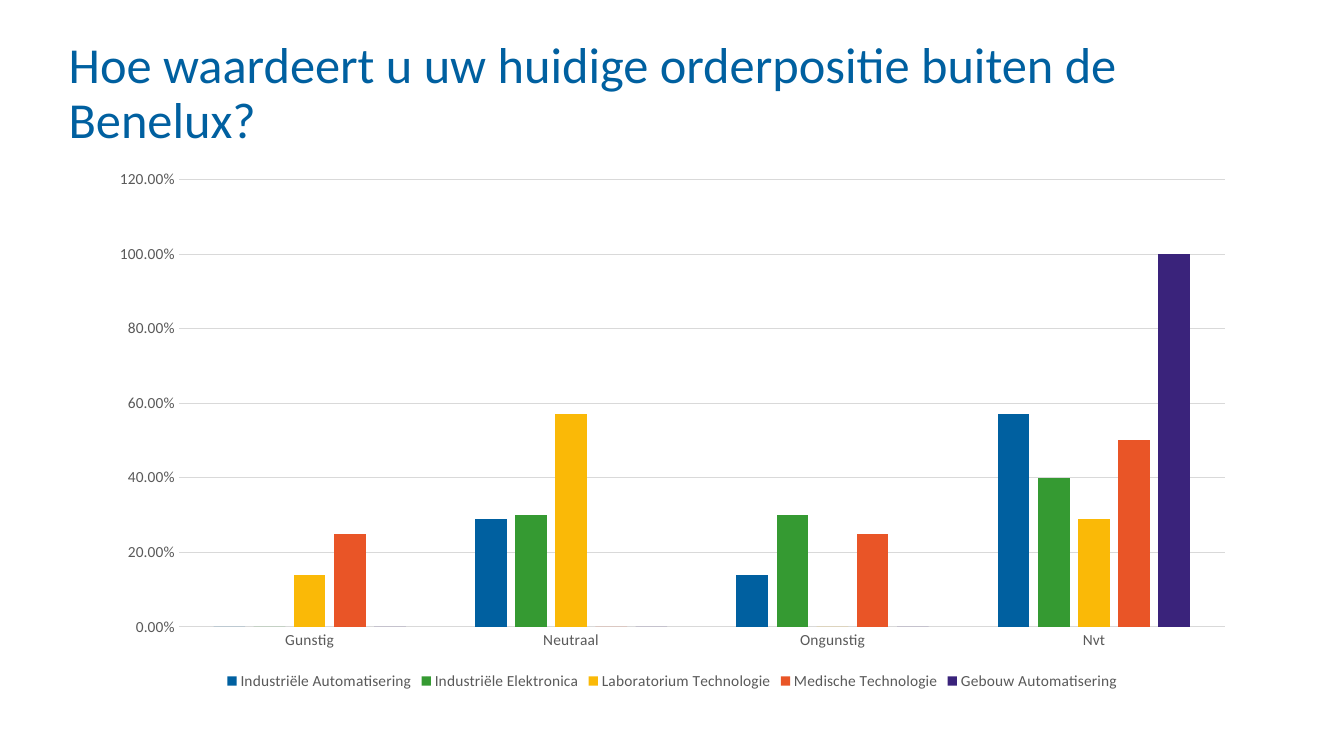
from lxml import etree
from pptx import Presentation
from pptx import util as u
from pptx.chart.data import CategoryChartData
from pptx.dml.color import RGBColor
from pptx.enum import chart as ch, text
from pptx.util import Pt

FONT = "Calibri"
COLORS = {"title": "0060A0", "label": "595959", "grid": "D9D9D9"}
ANSWERS = ["Gunstig", "Neutraal", "Ongunstig", "Nvt"]
# sector, share per answer, bar colour
SECTORS = [
    ("Industriële Automatisering", (0, 0.29, 0.14, 0.57), "0060A0"),
    ("Industriële Elektronica", (0, 0.3, 0.3, 0.4), "359A32"),
    ("Laboratorium Technologie", (0.14, 0.57, 0, 0.29), "FAB907"),
    ("Medische Technologie", (0.25, 0, 0.25, 0.5), "E95527"),
    ("Gebouw Automatisering", (0, 0, 0, 1), "3A237B"),
]


def rgb(name):
    return RGBColor.from_string(COLORS[name])


def set_font(font, size, color):
    font.name = FONT
    font.size = Pt(size)
    font.color.rgb = rgb(color)


def set_line(line, color):
    line.color.rgb = rgb(color)
    line.width = Pt(0.75)


def add_title(s, wording, left, top, width, height):
    tf = s.shapes.add_textbox(Pt(left), Pt(top), Pt(width), Pt(height)).text_frame
    tf.word_wrap = True
    tf.vertical_anchor = text.MSO_ANCHOR.TOP
    tf.margin_left = tf.margin_top = tf.margin_right = tf.margin_bottom = u.Pt(0)
    p = tf.paragraphs[0]
    p.line_spacing = 0.9
    r = p.add_run()
    r.text = wording
    set_font(r.font, 36, "title")


def style_axis(axis):
    axis.major_tick_mark = axis.minor_tick_mark = ch.XL_TICK_MARK.NONE
    set_font(axis.tick_labels.font, 11, "label")


def add_bar_chart(s, left, top, width, height):
    data = CategoryChartData(number_format="0.00%")
    data.categories = ANSWERS
    for name, shares, _ in SECTORS:
        data.add_series(name, shares)
    chart = s.shapes.add_chart(ch.XL_CHART_TYPE.COLUMN_CLUSTERED, Pt(left), Pt(top),
                               Pt(width), Pt(height), data).chart
    chart.has_title = False
    chart.font.name = FONT
    chart.font.size = Pt(10)

    # Bars
    plot = chart.plots[0]
    plot.gap_width = 219
    plot.overlap = -27
    plot.vary_by_categories = False
    for series, (_, _, color) in zip(plot.series, SECTORS):
        series.invert_if_negative = False
        series.format.fill.solid()
        series.format.fill.fore_color.rgb = RGBColor.from_string(color)

    # Axes and gridlines
    style_axis(chart.category_axis)
    set_line(chart.category_axis.format.line, "grid")
    values = chart.value_axis
    style_axis(values)
    values.minimum_scale, values.maximum_scale, values.major_unit = 0, 1.2, 0.2
    values.tick_labels.number_format = "0.00%"
    values.tick_labels.number_format_is_linked = False
    values.format.line.fill.background()
    set_line(values.major_gridlines.format.line, "grid")

    # Legend
    chart.has_legend = True
    chart.legend.position = ch.XL_LEGEND_POSITION.BOTTOM
    chart.legend.include_in_layout = False
    set_font(chart.legend.font, 11, "label")


def main():
    prs = Presentation()
    prs.slide_width, prs.slide_height = Pt(960), Pt(540)
    s = prs.slides.add_slide(prs.slide_layouts[6])
    add_title(s, "Hoe waardeert u uw huidige orderpositie buiten de Benelux?",
              49, 28.8, 860.4, 54.7)
    add_bar_chart(s, 69.1, 113.8, 822.2, 382.3)
    prs.save("out.pptx")


if __name__ == "__main__":
    main()
